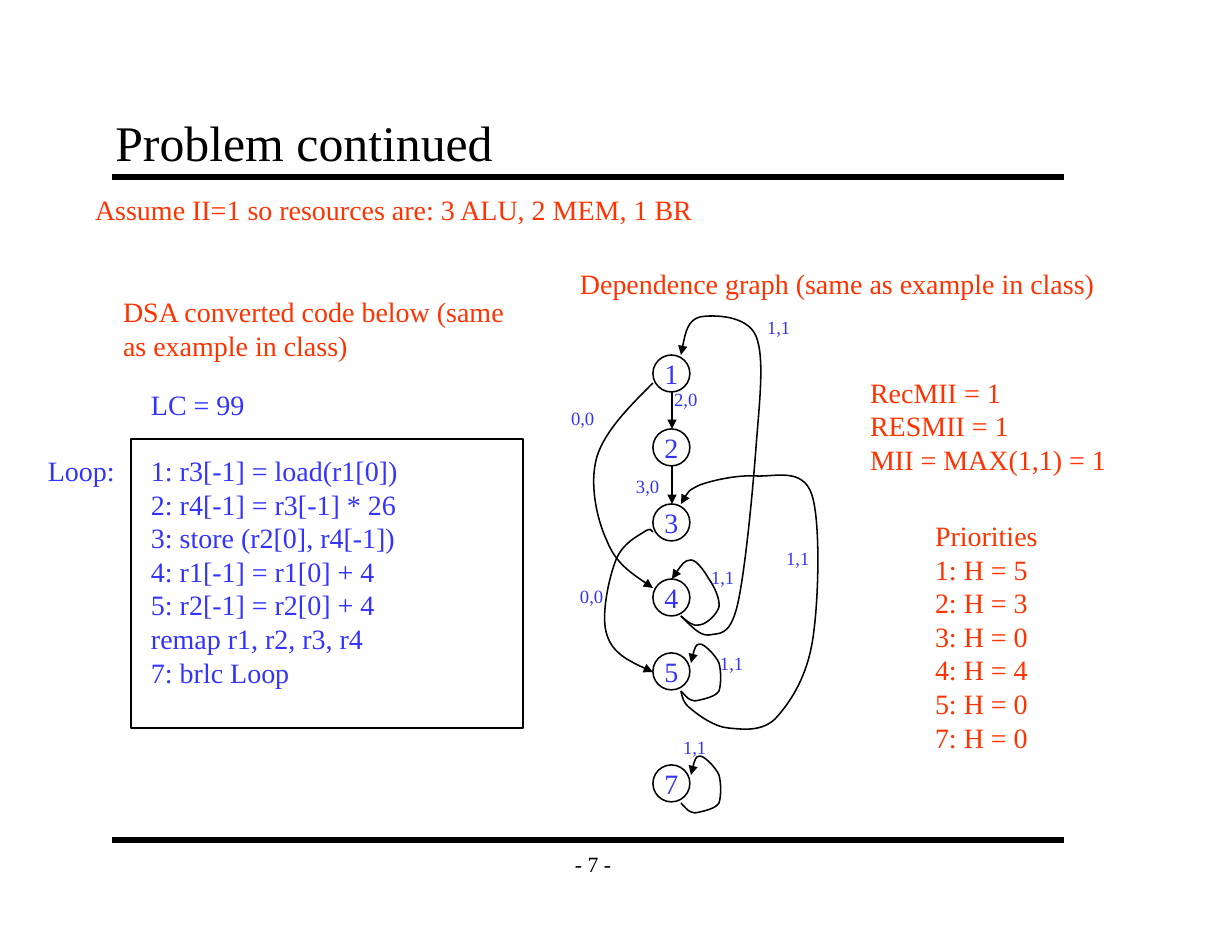
from lxml import etree
from pptx import Presentation, util as u
from pptx.dml.color import RGBColor
from pptx.enum import shapes, text
from pptx.oxml.ns import qn

BLACK = RGBColor(0x00, 0x00, 0x00)
BLUE = RGBColor(0x33, 0x33, 0xFF)
RED = RGBColor(0xFF, 0x33, 0x00)
FONT = "Times New Roman"
INCH = u.Inches

# Nodes of the dependence graph: label and top
NODES = [("1", 3.17), ("2", 3.83), ("3", 4.5),
         ("4", 5.17), ("5", 5.83), ("7", 6.83)]
NODE_X, NODE_D, MID_X = 5.83, 0.33, 6

# Edge labels: text, left, top
LABELS = [
    ("1,1", 6, 6.52), ("3,0", 5.58, 4.19), ("2,0", 5.92, 3.41),
    ("1,1", 6.75, 2.77), ("1,1", 6.92, 4.83), ("1,1", 6.33, 5.77),
    ("1,1", 6.25, 5), ("0,0", 5, 3.58), ("0,0", 5.08, 5.17),
]

# Curved edges: a start, then three points for each Bezier piece
LOOP = [(6.08, 6.17), (6.11, 6.2), (6.14, 6.24), (6.17, 6.25),
        (6.19, 6.26), (6.21, 6.26), (6.25, 6.25),
        (6.29, 6.24), (6.39, 6.22), (6.42, 6.17),
        (6.44, 6.11), (6.44, 5.99), (6.42, 5.92),
        (6.39, 5.85), (6.29, 5.75), (6.25, 5.75),
        (6.21, 5.75), (6.19, 5.83), (6.17, 5.92)]
CURVES = [
    # 4 to 1
    [(6.08, 5.5), (6.17, 5.59), (6.25, 5.68), (6.33, 5.67),
     (6.42, 5.65), (6.51, 5.69), (6.58, 5.42),
     (6.65, 5.14), (6.72, 4.4), (6.75, 4),
     (6.78, 3.6), (6.83, 3.19), (6.75, 3),
     (6.67, 2.81), (6.36, 2.81), (6.25, 2.83),
     (6.14, 2.86), (6.11, 3.01), (6.08, 3.17)],
    # 4 to itself
    [(6.08, 5.5), (6.14, 5.55), (6.19, 5.6), (6.25, 5.58),
     (6.31, 5.57), (6.4, 5.49), (6.42, 5.42),
     (6.43, 5.35), (6.38, 5.24), (6.33, 5.17),
     (6.29, 5.1), (6.22, 5), (6.17, 5),
     (6.11, 5), (6.06, 5.08), (6, 5.17)],
    # 5 and 7 to themselves
    LOOP,
    [(x, y + 1) for x, y in LOOP],
    # 5 to 3
    [(6.08, 6.17), (6.09, 6.22), (6.1, 6.28), (6.17, 6.33),
     (6.24, 6.39), (6.38, 6.49), (6.5, 6.5),
     (6.62, 6.51), (6.79, 6.54), (6.92, 6.42),
     (7.04, 6.29), (7.19, 6.08), (7.25, 5.75),
     (7.31, 5.42), (7.33, 4.67), (7.25, 4.42),
     (7.17, 4.17), (6.92, 4.26), (6.75, 4.25),
     (6.58, 4.24), (6.36, 4.29), (6.25, 4.33),
     (6.14, 4.38), (6.11, 4.44), (6.08, 4.5)],
    # 1 to 4
    [(5.83, 3.42), (5.62, 3.63), (5.4, 3.85), (5.33, 4.08),
     (5.26, 4.32), (5.33, 4.64), (5.42, 4.83),
     (5.5, 5.03), (5.67, 5.14), (5.83, 5.25)],
    # 3 to 5
    [(5.83, 4.75), (5.82, 4.73), (5.81, 4.71), (5.75, 4.75),
     (5.69, 4.79), (5.56, 4.85), (5.5, 5),
     (5.44, 5.15), (5.36, 5.5), (5.42, 5.67),
     (5.47, 5.83), (5.65, 5.92), (5.83, 6)],
]

# Text blocks: left, top, width, height, colour, lines
BLOCKS = [
    (0.75, 1.67, 5.55, 0.4, RED,
     ["Assume II=1 so resources are: 3 ALU, 2 MEM, 1 BR"]),
    (5.08, 2.33, 4.8, 0.4, RED,
     ["Dependence graph (same as example in class)"]),
    (1, 2.58, 3.62, 0.7, RED,
     ["DSA converted code below (same", "as example in class)"]),
    (1.25, 3.41, 1.04, 0.4, BLUE, ["LC = 99"]),
    (0.33, 4, 0.8, 0.4, BLUE, ["Loop:"]),
    (1.25, 4, 2.4, 2.2, BLUE,
     ["1: r3[-1] = load(r1[0])", "2: r4[-1] = r3[-1] * 26",
      "3: store (r2[0], r4[-1])", "4: r1[-1] = r1[0] + 4",
      "5: r2[-1] = r2[0] + 4", "remap r1, r2, r3, r4", "7: brlc Loop"]),
    (7.67, 3.3, 2.31, 1, RED,
     ["RecMII = 1", "RESMII = 1", "MII = MAX(1,1) = 1"]),
    (8.25, 4.58, 1.12, 2.2, RED,
     ["Priorities", "1: H = 5", "2: H = 3", "3: H = 0",
      "4: H = 4", "5: H = 0", "7: H = 0"]),
]


def write(shape, lines, size, color, align=text.PP_ALIGN.LEFT,
          anchor=text.MSO_ANCHOR.TOP, wrap=False):
    frame = shape.text_frame
    frame.word_wrap = wrap
    frame.vertical_anchor = anchor
    for i, line in enumerate(lines):
        para = frame.add_paragraph() if i else frame.paragraphs[0]
        para.alignment = align
        run = para.add_run()
        run.text = line
        run.font.size = u.Pt(size)
        run.font.name = FONT
        run.font.color.rgb = color


def add_text(slide, x, y, w, h, lines, size, color, **opts):
    box = slide.shapes.add_textbox(INCH(x), INCH(y), INCH(w), INCH(h))
    write(box, lines, size, color, **opts)
    return box


def pad(box):
    frame = box.text_frame
    frame.margin_left = frame.margin_right = INCH(0.11)
    frame.margin_top = frame.margin_bottom = INCH(0.06)


def outline(shape):
    shape.shadow.inherit = False
    shape.fill.background()
    shape.line.color.rgb = BLACK
    shape.line.width = u.Pt(1)


def add_head(shape):
    line = shape.line._get_or_add_ln()
    etree.SubElement(line, qn("a:tailEnd"), type="triangle")


def add_line(slide, x1, y1, x2, y2, width):
    line = slide.shapes.add_connector(
        shapes.MSO_CONNECTOR.STRAIGHT, INCH(x1), INCH(y1), INCH(x2), INCH(y2))
    line.line.color.rgb = BLACK
    line.line.width = u.Pt(width)
    etree.SubElement(line._element.spPr, qn("a:effectLst"))
    return line


def add_node(slide, label, y):
    node = slide.shapes.add_shape(
        shapes.MSO_SHAPE.OVAL, INCH(NODE_X), INCH(y), INCH(NODE_D), INCH(NODE_D))
    outline(node)
    write(node, [label], 18, BLUE, text.PP_ALIGN.CENTER, text.MSO_ANCHOR.MIDDLE)


def add_curve(slide, points):
    start, *rest = [(INCH(x), INCH(y)) for x, y in points]
    form = slide.shapes.build_freeform(*start)
    form.add_line_segments(rest, close=False)
    curve = form.convert_to_shape()
    # Turn each three straight segments into one Bezier piece
    segs = list(curve._element.iter(qn("a:lnTo")))
    for i in range(0, len(segs), 3):
        bend = etree.Element(qn("a:cubicBezTo"))
        segs[i].addprevious(bend)
        for seg in segs[i:i + 3]:
            bend.append(seg[0])
            seg.getparent().remove(seg)
    outline(curve)
    add_head(curve)


def main():
    deck = Presentation()
    deck.slide_width, deck.slide_height = INCH(11), INCH(8.5)
    slide = deck.slides.add_slide(deck.slide_layouts[6])

    # Rules, page number and title
    for y in (1.58, 7.5):
        add_line(slide, 1, y, 9.5, y, 4)
    pad(add_text(slide, 4.92, 7.5, 0.75, 0.42, ["- 7 -"], 14, BLACK,
                 align=text.PP_ALIGN.CENTER, anchor=text.MSO_ANCHOR.MIDDLE))
    pad(add_text(slide, 0.92, 0.92, 8.5, 0.67, ["Problem continued"], 32, BLACK,
                 anchor=text.MSO_ANCHOR.BOTTOM, wrap=True))

    # Dependence graph
    for label, y in NODES:
        add_node(slide, label, y)
    for (_, top), (_, low) in zip(NODES[:2], NODES[1:3]):
        add_head(add_line(slide, MID_X, top + NODE_D, MID_X, low, 1))
    for points in CURVES:
        add_curve(slide, points)
    for label, x, y in LABELS:
        add_text(slide, x, y, 0.41, 0.3, [label], 12, BLUE)

    # Code frame and text blocks
    frame = slide.shapes.add_shape(
        shapes.MSO_SHAPE.RECTANGLE, INCH(1.17), INCH(3.92), INCH(3.5), INCH(2.58))
    outline(frame)
    for x, y, w, h, color, lines in BLOCKS:
        add_text(slide, x, y, w, h, lines, 18, color)

    deck.save("out.pptx")


if __name__ == "__main__":
    main()
